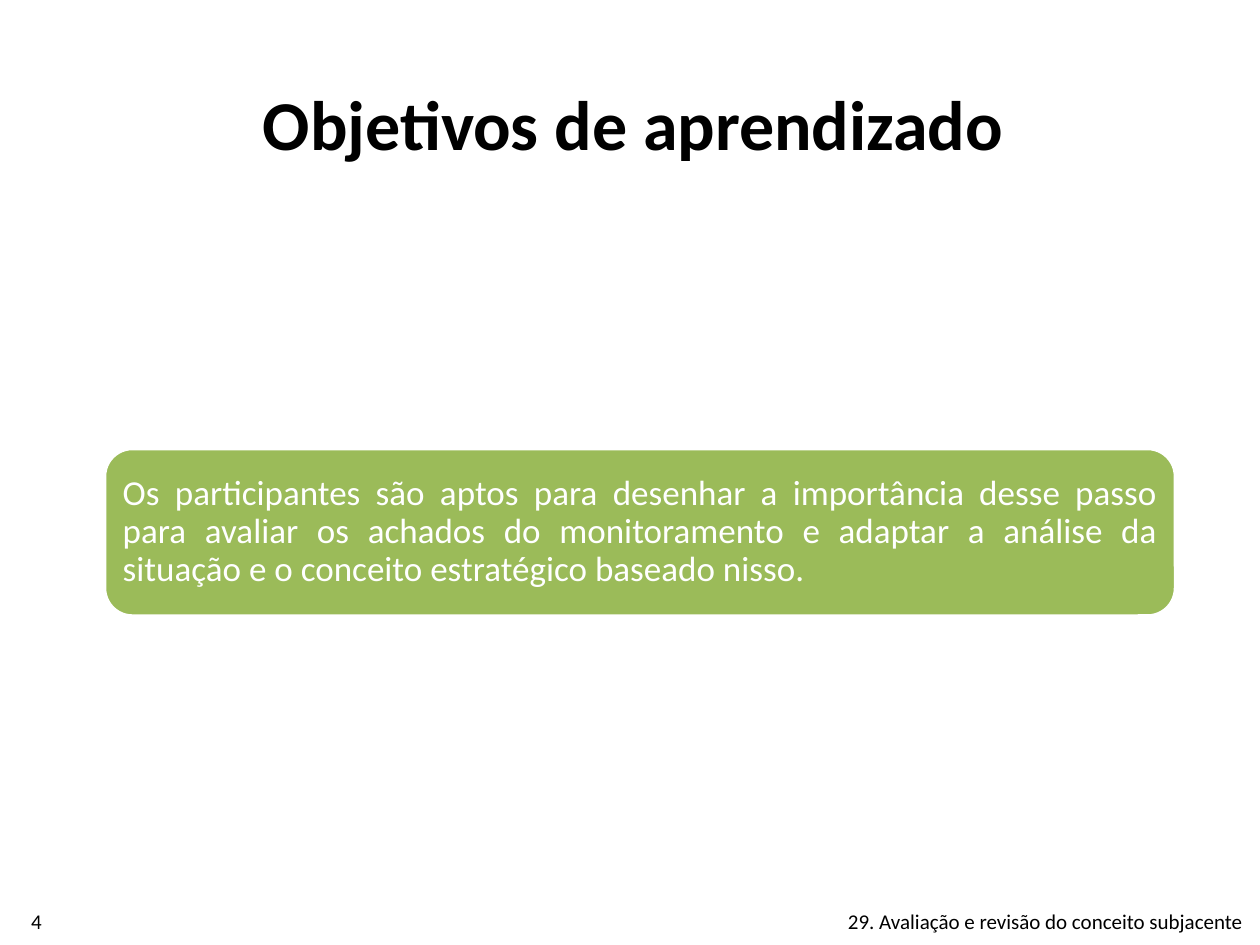
from pptx import Presentation
from pptx.dml.color import RGBColor
from pptx.enum import shapes, text
from pptx.util import Inches, Pt


def format_text(frame, size, color, align, bold=False):
    frame.word_wrap = True
    frame.vertical_anchor = text.MSO_ANCHOR.MIDDLE
    para = frame.paragraphs[0]
    para.alignment = align
    for span in para.runs:
        span.font.name = "Calibri"
        span.font.size = Pt(size)
        span.font.bold = bold
        span.font.color.rgb = RGBColor.from_string(color)


deck = Presentation()
deck.slide_width, deck.slide_height = Inches(10), Inches(7.5)
page = deck.slides.add_slide(deck.slide_layouts[5])

# Title
title = page.shapes.title
title.left, title.top = Inches(1.42), Inches(0.38)
title.width, title.height = Inches(7.21), Inches(1.18)
title.text_frame.text = "Objetivos de aprendizado"
format_text(title.text_frame, 40, "000000", text.PP_ALIGN.CENTER, bold=True)

# Learning objective
objective = page.shapes.add_shape(
    shapes.MSO_SHAPE.ROUNDED_RECTANGLE,
    Inches(0.83), Inches(3.56), Inches(8.5), Inches(1.33))
objective.shadow.inherit = False
objective.fill.solid()
objective.fill.fore_color.rgb = RGBColor.from_string("9BBB59")
objective.line.color.rgb = RGBColor.from_string("FFFFFF")
objective.line.width = Pt(2)
frame = objective.text_frame
frame.margin_left = frame.margin_right = Inches(0.08)
frame.margin_top = frame.margin_bottom = Inches(0.08)
frame.text = (
    "Os participantes são aptos para desenhar a importância desse passo "
    "para avaliar os achados do monitoramento e adaptar a análise da "
    "situação e o conceito estratégico baseado nisso.")
format_text(frame, 20, "FFFFFF", text.PP_ALIGN.JUSTIFY)
frame.paragraphs[0].line_spacing = 0.9

# Footer: page number and chapter name
footers = [
    ("4", -0.01, 0.6, text.PP_ALIGN.CENTER),
    ("29. Avaliação e revisão do conceito subjacente ", 4.13, 5.87,
     text.PP_ALIGN.RIGHT),
]
for wording, left, width, align in footers:
    box = page.shapes.add_textbox(
        Inches(left), Inches(7.12), Inches(width), Inches(0.38))
    box.text_frame.text = wording
    format_text(box.text_frame, 12, "000000", align)

deck.save("out.pptx")
